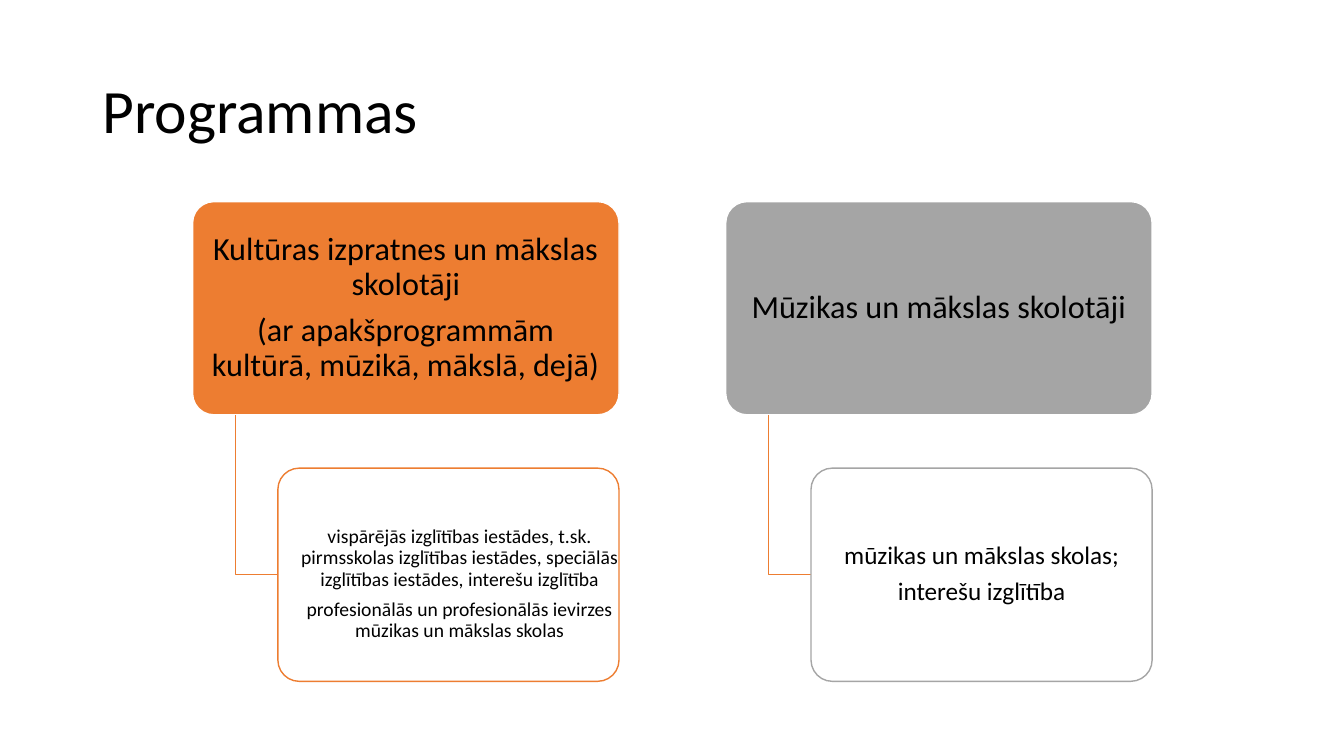
from pptx import Presentation
from pptx.dml.color import RGBColor
from pptx.enum.shapes import MSO_SHAPE
from pptx.enum.text import MSO_ANCHOR, PP_ALIGN
from pptx.util import Pt

BLACK = RGBColor(0x00, 0x00, 0x00)
WHITE = RGBColor(0xFF, 0xFF, 0xFF)
ORANGE = RGBColor(0xED, 0x7D, 0x31)
GRAY = RGBColor(0xA5, 0xA5, 0xA5)
FONT = "Calibri"

# Content: colour, programme lines, workplace lines, their size, extra label room
TITLE = "Programmas"
GROUPS = [
    (ORANGE,
     ["Kultūras izpratnes un mākslas skolotāji",
      "(ar apakšprogrammām kultūrā, mūzikā, mākslā, dejā)"],
     ["vispārējās izglītības iestādes, t.sk. pirmsskolas izglītības iestādes, "
      "speciālās izglītības iestādes, interešu izglītība",
      "profesionālās un profesionālās ievirzes mūzikas un mākslas skolas"],
     14, (16, 13.5)),
    (GRAY,
     ["Mūzikas un mākslas skolotāji"],
     ["mūzikas un mākslas skolas;", "interešu izglītība"],
     18, (0, 0)),
]

# Layout in points
LEFT, TOP, STEP = 137.6, 144, 380.8
WIDE, HIGH = 304.6, 152.3
INDENT, DROP = WIDE / 5, HIGH * 1.25
PAD = 4.4

prs = Presentation()
prs.slide_width, prs.slide_height = Pt(960), Pt(540)
slide = prs.slides.add_slide(prs.slide_layouts[5])
shapes = slide.shapes


def write(frame, lines, size, align, gap=0):
    frame.word_wrap = True
    frame.vertical_anchor = MSO_ANCHOR.MIDDLE
    for i, line in enumerate(lines):
        para = frame.paragraphs[0] if i == 0 else frame.add_paragraph()
        para.alignment = align
        para.line_spacing = 0.9
        para.space_before = Pt(gap if i else 0)
        run = para.add_run()
        run.text = line
        run.font.name, run.font.size = FONT, Pt(size)
        run.font.color.rgb = BLACK


def card(x, y, wide, fill, edge):
    box = shapes.add_shape(MSO_SHAPE.ROUNDED_RECTANGLE,
                           Pt(x), Pt(y), Pt(wide), Pt(HIGH))
    box.adjustments[0] = 0.1
    box.shadow.inherit = False
    box.fill.solid()
    box.fill.fore_color.rgb = fill
    box.line.color.rgb = edge
    box.line.width = Pt(1)


def label(x, y, wide, lines, size, gap, inset, extra=(0, 0)):
    box = shapes.add_textbox(Pt(x + PAD), Pt(y + PAD),
                             Pt(wide - 2 * PAD + extra[0]),
                             Pt(HIGH - 2 * PAD + extra[1]))
    frame = box.text_frame
    frame.margin_left = frame.margin_right = Pt(inset)
    frame.margin_top = frame.margin_bottom = Pt(inset / 1.5)
    write(frame, lines, size, PP_ALIGN.CENTER, gap)


def elbow(x, y, mid):
    path = shapes.build_freeform(Pt(x), Pt(y))
    path.add_line_segments([(Pt(x), Pt(mid)), (Pt(x + INDENT / 2), Pt(mid))],
                           close=False)
    line = path.convert_to_shape()
    line.shadow.inherit = False
    line.fill.background()
    line.line.color.rgb = ORANGE
    line.line.width = Pt(1)


# Title
head = shapes.title
head.left, head.top, head.width, head.height = Pt(66), Pt(28.8), Pt(828), Pt(104.4)
write(head.text_frame, [TITLE], 44, PP_ALIGN.LEFT)

# Programmes, each with its workplaces hanging below
for i, (color, names, places, size, extra) in enumerate(GROUPS):
    x = LEFT + i * STEP
    low, sub = TOP + DROP, WIDE - INDENT
    card(x, TOP, WIDE, color, WHITE)
    label(x, TOP, WIDE, names, 23, 8.1, 3.4)
    elbow(x + INDENT / 2, TOP + HIGH, low + HIGH / 2)
    card(x + INDENT, low, sub, WHITE, color)
    label(x + INDENT, low, sub, places, size, 6.3, 2.7, extra)

prs.save("out.pptx")
